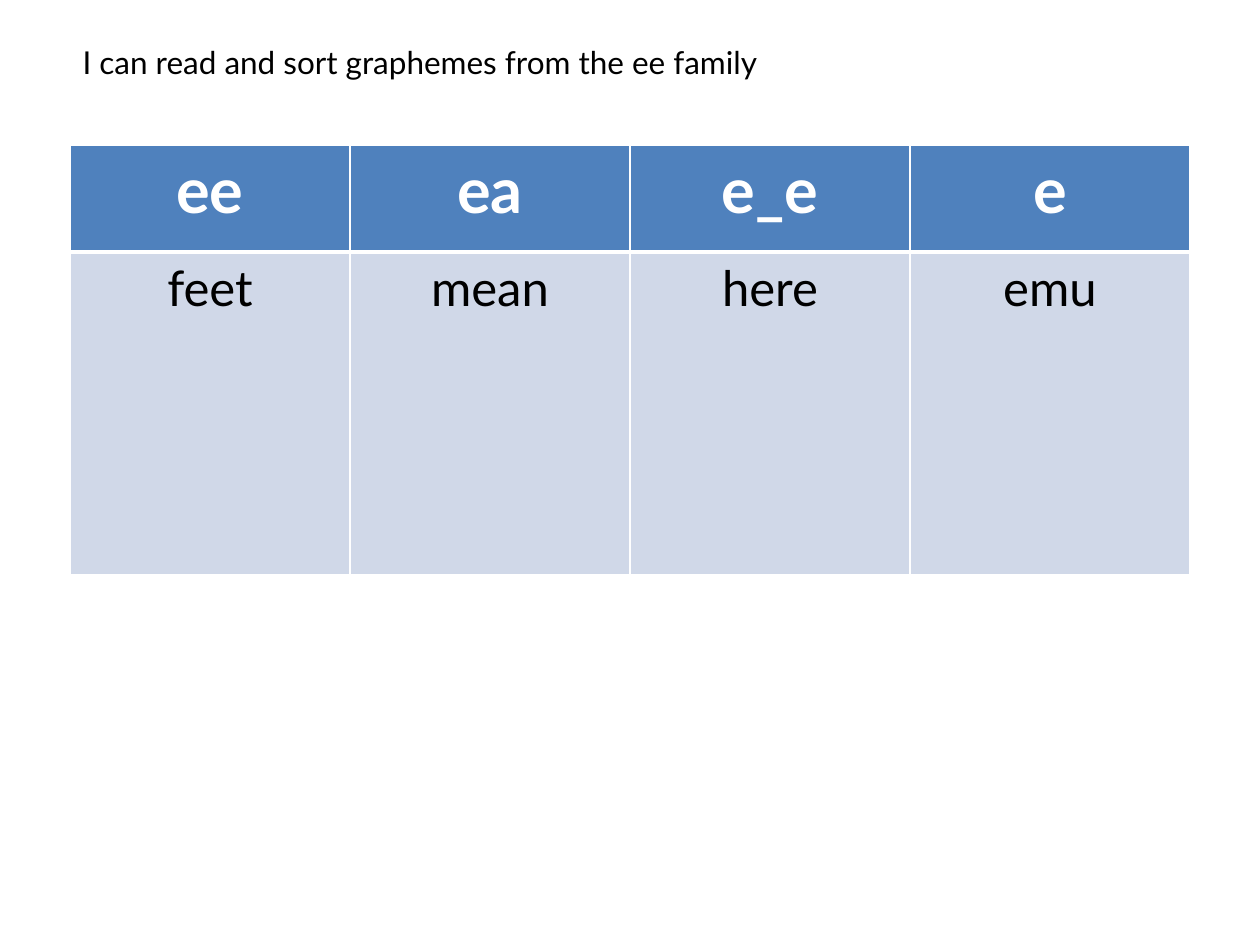
"""Build a slide with a table for sorting words by their ee-family grapheme."""
from lxml import etree
from pptx import Presentation
from pptx.dml.color import RGBColor
from pptx.enum.text import MSO_ANCHOR, MSO_AUTO_SIZE, PP_ALIGN
from pptx.oxml.ns import qn
from pptx.util import Pt

LEFT, CENTER = PP_ALIGN.LEFT, PP_ALIGN.CENTER
TOP = MSO_ANCHOR.TOP
GROW = MSO_AUTO_SIZE.SHAPE_TO_FIT_TEXT

WHITE = RGBColor(0xFF, 0xFF, 0xFF)
BLACK = RGBColor(0x00, 0x00, 0x00)
BLUE = RGBColor(0x4F, 0x81, 0xBD)
PALE_BLUE = RGBColor(0xD0, 0xD8, 0xE8)

PX_PER_INCH = 126
EMU_PER_PX = 914400 / PX_PER_INCH
SLIDE_WIDTH, SLIDE_HEIGHT = 1260, 945
MARGIN = 70
CONTENT_WIDTH = SLIDE_WIDTH - 2 * MARGIN

GOAL = "I can read and sort graphemes from the ee family"
GOAL_FONT = {"name": "Lato", "size": Pt(18), "bold": False}
ROWS = [
    {
        "words": ["ee", "ea", "e_e", "e"],
        "height": 107,
        "fill": BLUE,
        "color": WHITE,
        "font": {"name": "Lato", "size": Pt(36), "bold": True},
        "borders": {"lnL": 1, "lnR": 1, "lnT": 1, "lnB": 3},
    },
    {
        "words": ["feet", "mean", "here", "emu"],
        "height": 323,
        "fill": PALE_BLUE,
        "color": BLACK,
        "font": {"name": "Lato", "size": Pt(28), "bold": False},
        "borders": {"lnL": 1, "lnR": 1, "lnT": 3, "lnB": 1},
    },
]


def px(length):
    return round(length * EMU_PER_PX)


def apply(target, values):
    for attribute, value in values.items():
        setattr(target, attribute, value)


def write(frame, text, font, color, alignment):
    paragraph = frame.paragraphs[0]
    paragraph.alignment = alignment
    run = paragraph.add_run()
    run.text = text
    apply(run.font, font)
    run.font.color.rgb = color


def add_borders(cell, widths):
    properties = cell._tc.get_or_add_tcPr()
    for position, (edge, width) in enumerate(widths.items()):
        line = etree.Element(qn(f"a:{edge}"), w=str(Pt(width)))
        fill = etree.SubElement(line, qn("a:solidFill"))
        etree.SubElement(fill, qn("a:srgbClr"), val=str(WHITE))
        properties.insert(position, line)


def add_goal(slide):
    goal = slide.shapes.title
    apply(goal, {"left": px(MARGIN), "top": px(37),
                 "width": px(CONTENT_WIDTH), "height": px(89)})
    apply(goal.text_frame, {"word_wrap": True, "auto_size": GROW,
                            "vertical_anchor": TOP})
    write(goal.text_frame, GOAL, GOAL_FONT, BLACK, LEFT)


def add_sorting_table(slide):
    column_count = len(ROWS[0]["words"])
    table_height = sum(row["height"] for row in ROWS)
    table = slide.shapes.add_table(
        len(ROWS), column_count, px(MARGIN), px(145),
        px(CONTENT_WIDTH), px(table_height)).table
    for column in table.columns:
        column.width = px(CONTENT_WIDTH / column_count)
    for table_row, row in zip(table.rows, ROWS):
        table_row.height = px(row["height"])
        for cell, word in zip(table_row.cells, row["words"]):
            cell.fill.solid()
            cell.fill.fore_color.rgb = row["fill"]
            write(cell.text_frame, word, row["font"], row["color"], CENTER)
            add_borders(cell, row["borders"])


def main():
    presentation = Presentation()
    apply(presentation, {"slide_width": px(SLIDE_WIDTH),
                         "slide_height": px(SLIDE_HEIGHT)})
    title_only = presentation.slide_layouts.get_by_name("Title Only")
    slide = presentation.slides.add_slide(title_only)
    add_sorting_table(slide)
    add_goal(slide)
    presentation.save("out.pptx")


if __name__ == "__main__":
    main()
